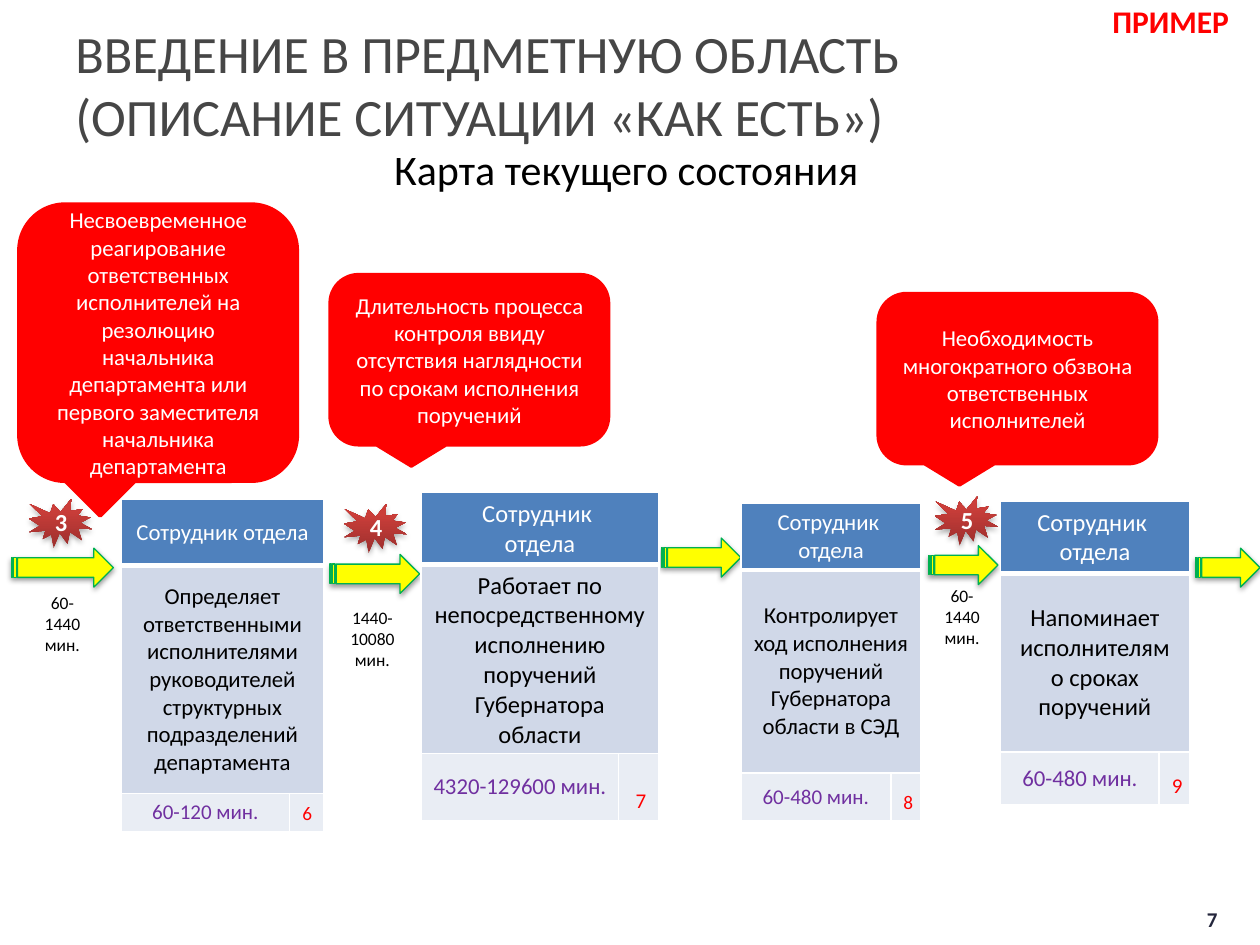
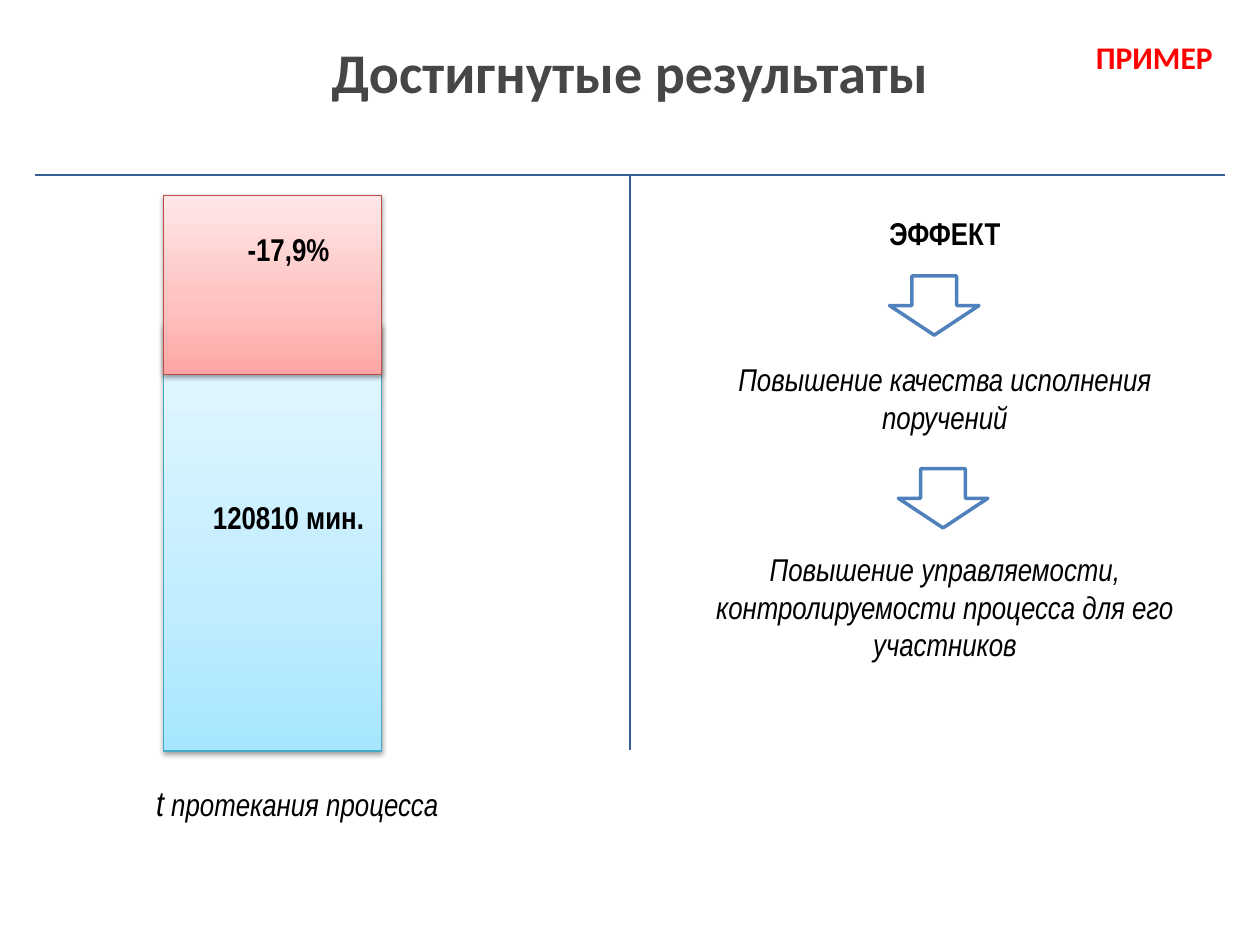
"""Builds two slides: a map of the current process state and the achieved results."""
from lxml.etree import SubElement
from pptx import Presentation
from pptx.dml.color import RGBColor
from pptx.enum.shapes import MSO_CONNECTOR, MSO_SHAPE as Preset
from pptx.enum.text import MSO_ANCHOR as Anchor, MSO_AUTO_SIZE as AutoSize, PP_ALIGN as Align
from pptx.oxml.ns import qn
from pptx.util import Inches, Pt

WIDTH, HEIGHT = Inches(10), Inches(7.5)
COLUMN, ROW = WIDTH // 100, HEIGHT // 75
TITLE_ONLY = 5

MAIN_FONT, NARROW_FONT = "Calibri", "Arial Narrow"
BLACK = RGBColor(0x00, 0x00, 0x00)
WHITE = RGBColor(0xFF, 0xFF, 0xFF)
RED = RGBColor(0xFF, 0x00, 0x00)
YELLOW = RGBColor(0xFF, 0xFF, 0x00)
GREEN = RGBColor(0x00, 0xB0, 0x50)
PURPLE = RGBColor(0x70, 0x30, 0xA0)
TITLE_GRAY = RGBColor(0x46, 0x46, 0x46)
NUMBER_GRAY = RGBColor(0x24, 0x26, 0x3C)
BLUE = RGBColor(0x4F, 0x81, 0xBD)
RULE_BLUE = RGBColor(0x37, 0x60, 0x92)
BODY_FILL = RGBColor(0xD0, 0xD8, 0xE8)
FOOT_FILL = RGBColor(0xE9, 0xED, 0xF4)
TEAL_LINE = RGBColor(0x46, 0xAA, 0xC5)
BRICK_LINE = RGBColor(0xBF, 0x4C, 0x48)
SEAL_STOPS = [(0, RGBColor(0x9C, 0x2F, 0x2D)), (80, RGBColor(0xCB, 0x3E, 0x3A)),
              (100, RGBColor(0xCE, 0x3B, 0x37))]
BLUE_STOPS = [(0, RGBColor(0xA7, 0xE6, 0xFF)), (35, RGBColor(0xC1, 0xED, 0xFF)),
              (100, RGBColor(0xE7, 0xF8, 0xFF))]
PINK_STOPS = [(0, RGBColor(0xFF, 0xA6, 0xA5)), (35, RGBColor(0xFF, 0xC0, 0xBF)),
              (100, RGBColor(0xFF, 0xE7, 0xE7))]

HEADER = ["Сотрудник ", "отдела"]
STEPS = [
    ((9.6, 39.6), (13.4, 2.7), (5.3, 18.1, 3), 13, ["Сотрудник отдела"],
     "Определяет ответственными исполнителями руководителей структурных "
     "подразделений департамента", "60-120 мин.", "6"),
    ((33.4, 39.1), (15.7, 3.2), (5.7, 15, 5.3), 14, HEADER,
     "Работает по непосредственному исполнению поручений Губернатора области",
     "4320-129600 мин.", "7"),
    ((58.8, 39.9), (11.9, 2.4), (5.2, 16.1, 3.8), 13, HEADER,
     "Контролирует ход исполнения поручений Губернатора области в СЭД",
     "60-480 мин.", "8"),
    ((79.4, 39.8), (12.6, 2.4), (5.7, 14.2, 4.2), 14, HEADER,
     "Напоминает исполнителям о сроках поручений", "60-480 мин.", "9"),
]
ARROWS = [(0.9, 43.5, 8.1), (26.2, 44, 7.1), (52.5, 42.7, 6.3),
          (73.7, 43.3, 5.5), (94.9, 43.5, 5.1)]
PROBLEMS = [
    (1.5, 16.2, 22, "Несвоевременное реагирование ответственных исполнителей на "
     "резолюцию начальника департамента или первого заместителя начальника департамента"),
    (26.2, 21.8, 13.5, "Длительность процесса контроля ввиду отсутствия наглядности "
     "по срокам исполнения поручений"),
    (69.7, 23.3, 13.5, "Необходимость многократного обзвона ответственных исполнителей"),
]
SEALS = [(2.3, 39.6, "3"), (27.3, 40, "4"), (74.2, 39.4, "5")]
WAITS = [((2.2, 46.5, 5.5, 6.1), "60-1440 мин."),
         ((26.3, 47.7, 6.5, 6.1), "1440- 10080 мин."),
         ((73.6, 45.9, 5.5, 6), "60-1440 мин.")]
EFFECTS = [("ЭФФЕКТ", True, 0), ("Повышение качества исполнения поручений", False, 62),
           ("Повышение управляемости, контролируемости процесса для его участников", False, 65)]


def place(left, top, width, height):
    """Turn grid columns and rows into slide lengths."""
    return [round(count * unit) for count, unit in
            zip((left, top, width, height), (COLUMN, ROW, COLUMN, ROW))]


def add_run(paragraph, text, size, color, bold=False, italic=False, font=MAIN_FONT):
    """Add one formatted run to a paragraph."""
    run = paragraph.add_run()
    run.text = text
    run.font.name, run.font.size = font, Pt(size)
    run.font.bold, run.font.italic = bold, italic
    run.font.color.rgb = color


def write_lines(frame, lines, size, color, align=Align.CENTER, **style):
    """Write each line as a paragraph of the text frame."""
    for index, line in enumerate(lines):
        paragraph = frame.add_paragraph() if index else frame.paragraphs[0]
        paragraph.alignment = align
        add_run(paragraph, line, size, color, **style)


def add_text_box(slide, box, lines=(), size=18, color=BLACK, anchor=Anchor.TOP, **style):
    """Add a wrapping text box and return its frame."""
    frame = slide.shapes.add_textbox(*place(*box)).text_frame
    frame.word_wrap, frame.vertical_anchor = True, anchor
    write_lines(frame, lines, size, color, **style)
    return frame


def set_title(slide, box, text, size, color, bold=False):
    """Move and format the title placeholder."""
    title = slide.shapes.title
    title.left, title.top, title.width, title.height = place(*box)
    title.text_frame.auto_size = AutoSize.NONE
    title.text_frame.vertical_anchor = Anchor.MIDDLE
    write_lines(title.text_frame, [text], size, color, bold=bold)


def add_example_mark(slide, left, top):
    """Mark the slide as an example."""
    add_text_box(slide, (left, top, 11.6, 4), ["ПРИМЕР"], 18, RED, align=Align.LEFT, bold=True)


def add_preset(slide, preset, box, fill=None, line=None, line_width=0.75):
    """Add a preset shape with a plain fill and outline and no shadow."""
    shape = slide.shapes.add_shape(preset, *place(*box))
    shape.shadow.inherit = False
    if fill is not None:
        shape.fill.solid()
        shape.fill.fore_color.rgb = fill
    if line is None:
        shape.line.fill.background()
    else:
        shape.line.color.rgb = line
        shape.line.width = Pt(line_width)
    return shape


def add_color(parent, color):
    """Append an RGB colour element and return it."""
    return SubElement(parent, qn("a:srgbClr"), val=str(color))


def drop_shadow(shape, opacity=38, blur=3.1, distance=1.6):
    """Cast a soft black shadow downwards."""
    effects = shape._element.spPr.find(qn("a:effectLst"))
    shadow = SubElement(effects, qn("a:outerShdw"), blurRad=str(Pt(blur)),
                        dist=str(Pt(distance)), dir="5400000", rotWithShape="0")
    SubElement(add_color(shadow, BLACK), qn("a:alpha"), val=str(opacity * 1000))


def fill_upwards(shape, stops):
    """Fill the shape with a gradient running from bottom to top."""
    shape.fill.gradient()
    shape.fill.gradient_angle = 90
    stop_list = shape._element.spPr.find(qn("a:gradFill")).find(qn("a:gsLst"))
    stop_list.clear()
    for position, color in stops:
        add_color(SubElement(stop_list, qn("a:gs"), pos=str(position * 1000)), color)


def add_flow_arrow(slide, left, top, width):
    """Add a striped arrow between two process steps."""
    arrow = add_preset(slide, Preset.STRIPED_RIGHT_ARROW, (left, top, width, 3.1), YELLOW, GREEN)
    drop_shadow(arrow)


def add_problem(slide, left, top, height, text):
    """Add a red callout naming a problem."""
    callout = add_preset(slide, Preset.ROUNDED_RECTANGULAR_CALLOUT,
                         (left, top, 22.1, height), RED, RED, 2)
    callout.text_frame.vertical_anchor = Anchor.MIDDLE
    write_lines(callout.text_frame, [text], 13, WHITE)


def add_seal(slide, left, top, number):
    """Add a numbered burst."""
    seal = add_preset(slide, Preset.EXPLOSION1, (left, top, 5, 3.9))
    fill_upwards(seal, SEAL_STOPS)
    drop_shadow(seal, 35, 3.1, 1.8)
    seal.text_frame.vertical_anchor = Anchor.MIDDLE
    write_lines(seal.text_frame, [number], 14, WHITE, bold=True)


def add_bar(slide, top, height, stops, line):
    """Add one part of the process time bar."""
    bar = add_preset(slide, Preset.RECTANGLE, (13, top, 17.3, height), line=line)
    fill_upwards(bar, stops)
    drop_shadow(bar)


def add_rule(slide, left, top, right, bottom):
    """Draw a straight dividing line."""
    rule = slide.shapes.add_connector(MSO_CONNECTOR.STRAIGHT, *place(left, top, right, bottom))
    rule.line.color.rgb, rule.line.width = RULE_BLUE, Pt(1.5)
    SubElement(rule._element.spPr, qn("a:effectLst"))


def format_cell(cell, fill, bottom_width=1, anchor=Anchor.MIDDLE):
    """Set the fill, anchor and white borders of a cell."""
    cell.fill.solid()
    cell.fill.fore_color.rgb = fill
    cell.vertical_anchor = anchor
    properties = cell._tc.get_or_add_tcPr()
    for index, side in enumerate("LRTB"):
        width = bottom_width if side == "B" else 1
        border = SubElement(properties, qn(f"a:ln{side}"), w=str(Pt(width)))
        add_color(SubElement(border, qn("a:solidFill")), WHITE)
        properties.insert(index, border)


def add_step(slide, corner, widths, heights, size, header, task, duration, number):
    """Add the table of one process step."""
    box = place(*corner, sum(widths), sum(heights))
    table = slide.shapes.add_table(3, 2, *box).table
    for column, width in zip(table.columns, widths):
        column.width = round(width * COLUMN)
    for row, height in zip(table.rows, heights):
        row.height = round(height * ROW)
    for index, (fill, bottom_width) in enumerate([(BLUE, 3), (BODY_FILL, 1)]):
        for cell in table.rows[index].cells:
            format_cell(cell, fill, bottom_width)
        table.cell(index, 0).merge(table.cell(index, 1))
    format_cell(table.cell(2, 0), FOOT_FILL)
    format_cell(table.cell(2, 1), FOOT_FILL, anchor=Anchor.BOTTOM)
    write_lines(table.cell(0, 0).text_frame, header, size, WHITE)
    write_lines(table.cell(1, 0).text_frame, [task], size, BLACK)
    write_lines(table.cell(2, 0).text_frame, [duration], size - 1, PURPLE)
    write_lines(table.cell(2, 1).text_frame, [number], size - 2, RED, Align.RIGHT)


def build_state_map(slide):
    """Fill the slide with the map of the current state."""
    set_title(slide, (2.2, 11.5, 95, 3.7), "Карта текущего состояния", 24, BLACK)
    add_text_box(slide, (94.3, 71.4, 3.8, 3.1), ["7"], 12, NUMBER_GRAY, Anchor.MIDDLE, bold=True)
    heading = add_text_box(slide, (5, 2.1, 95, 9.2), anchor=Anchor.MIDDLE).paragraphs[0]
    add_run(heading, "ВВЕДЕНИЕ В ПРЕДМЕТНУЮ ОБЛАСТЬ", 30, TITLE_GRAY)
    heading.add_line_break()
    add_run(heading, "(ОПИСАНИЕ СИТУАЦИИ «КАК ЕСТЬ»)", 30, TITLE_GRAY)
    for add_element, items in ((add_flow_arrow, ARROWS), (add_step, STEPS),
                               (add_problem, PROBLEMS), (add_seal, SEALS)):
        for item in items:
            add_element(slide, *item)
    for box, wait in WAITS:
        add_text_box(slide, box, [wait], 10)
    add_example_mark(slide, 87.3, -0.3)


def build_results(slide):
    """Fill the slide with the achieved results."""
    set_title(slide, (1.2, 2.1, 97.6, 7.1), "Достигнутые результаты", 32, TITLE_GRAY, bold=True)
    add_bar(slide, 25.7, 33.9, BLUE_STOPS, TEAL_LINE)
    add_bar(slide, 15.5, 14.2, PINK_STOPS, BRICK_LINE)
    for top, label in ((17.8, "-17,9%"), (39, "120810 мин.")):
        add_text_box(slide, (15.4, top, 15, 4), [label], bold=True, font=NARROW_FONT)
    caption = add_text_box(slide, (10.6, 61.5, 26, 4.4)).paragraphs[0]
    caption.alignment = Align.CENTER
    for text, size in (("t", 20), (" протекания процесса", 18)):
        add_run(caption, text, size, BLACK, italic=True, font=NARROW_FONT)
    add_rule(slide, 2.8, 13.9, 97.2, 13.9)
    add_rule(slide, 50, 13.9, 50, 59.5)
    effects = add_text_box(slide, (55.3, 16.5, 39.4, 40.1))
    for index, (text, is_heading, gap) in enumerate(EFFECTS):
        paragraph = effects.add_paragraph() if index else effects.paragraphs[0]
        paragraph.alignment, paragraph.space_before = Align.CENTER, Pt(gap)
        add_run(paragraph, text, 18, BLACK, is_heading, not is_heading, NARROW_FONT)
    for left, top in ((70.6, 21.9), (71.3, 37.2)):
        add_preset(slide, Preset.DOWN_ARROW, (left, top, 7.1, 4.7), WHITE, BLUE, 2)
    add_example_mark(slide, 86, 2.5)


def main():
    """Build both slides and save the presentation."""
    presentation = Presentation()
    presentation.slide_width, presentation.slide_height = WIDTH, HEIGHT
    for build in (build_state_map, build_results):
        build(presentation.slides.add_slide(presentation.slide_layouts[TITLE_ONLY]))
    presentation.save("out.pptx")


if __name__ == "__main__":
    main()
